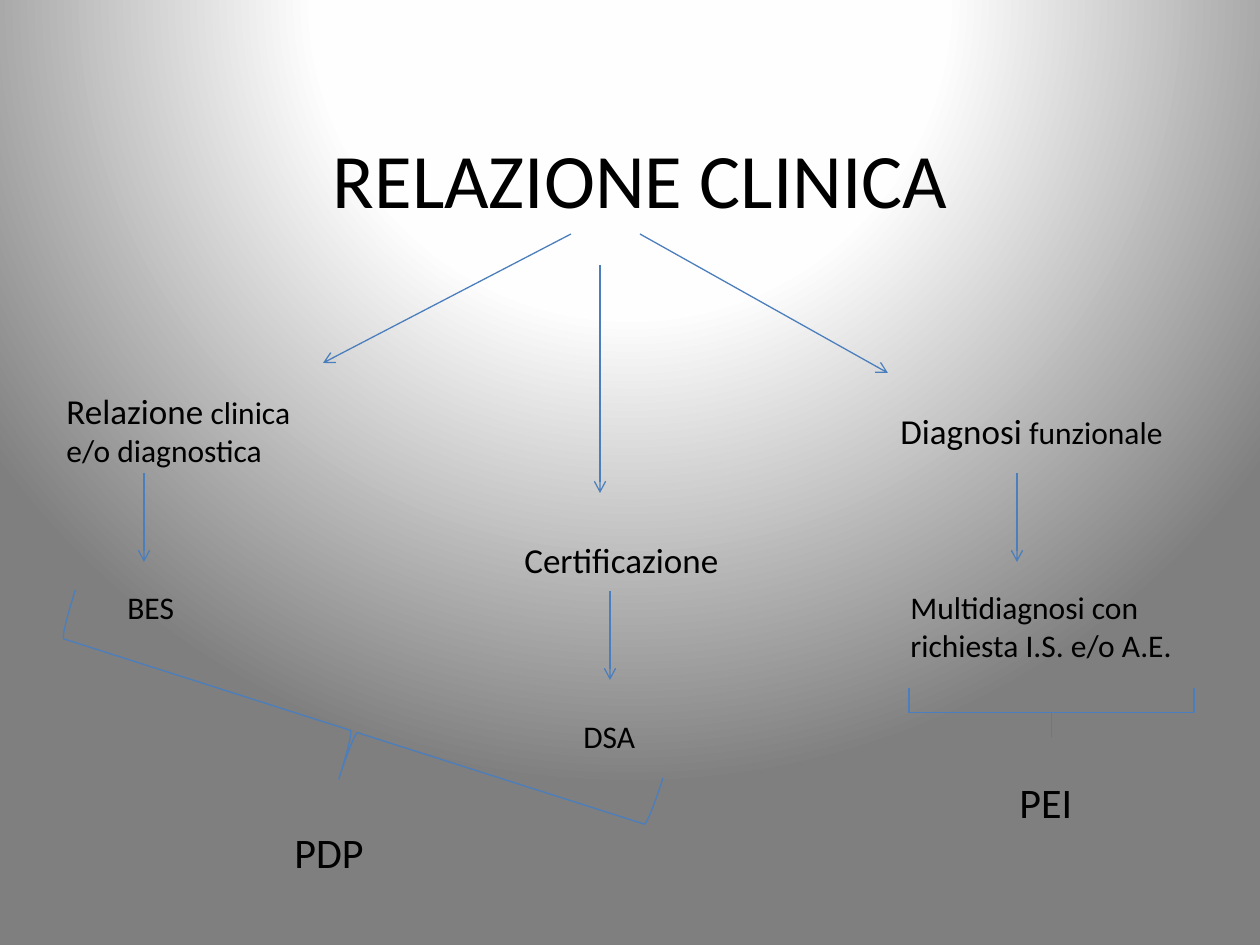
from pptx import Presentation
from pptx.dml.color import RGBColor
from pptx.enum.shapes import MSO_CONNECTOR, MSO_SHAPE
from pptx.enum.text import MSO_ANCHOR, MSO_AUTO_SIZE, PP_ALIGN
from pptx.oxml import parse_xml
from pptx.oxml.ns import nsdecls, qn
from pptx.util import Emu, Pt

STRAIGHT = MSO_CONNECTOR.STRAIGHT
BRACE = MSO_SHAPE.RIGHT_BRACE
MIDDLE = MSO_ANCHOR.MIDDLE
GROW = MSO_AUTO_SIZE.SHAPE_TO_FIT_TEXT
CENTER = PP_ALIGN.CENTER

BLACK = RGBColor(0x00, 0x00, 0x00)
BLUE = RGBColor(0x4B, 0x7E, 0xBC)
FONT = "Calibri"
EMU_PER_PX = 914400 / 126
ARROW_LENGTH = 89


def px(value):
    return Emu(round(value * EMU_PER_PX))


def set_background(slide):
    stops = ((0, "FFFFFF"), (40, "FEFEFE"), (100, "7F7F7F"))
    gs = "".join(f'<a:gs pos="{pos * 1000}"><a:srgbClr val="{color}"/></a:gs>'
                 for pos, color in stops)
    bg = parse_xml(
        f'<p:bg {nsdecls("p", "a")}><p:bgPr><a:gradFill rotWithShape="1">'
        f'<a:gsLst>{gs}</a:gsLst><a:path path="circle">'
        '<a:fillToRect l="50000" t="-80000" r="50000" b="180000"/></a:path>'
        '</a:gradFill><a:effectLst/></p:bgPr></p:bg>')
    slide.element.find(qn("p:cSld")).insert(0, bg)


def add_text(slide, box, lines):
    """Each line is a list of (text, size) runs."""
    sp = slide.shapes.add_textbox(*map(px, box))
    tf = sp.text_frame
    tf.word_wrap = False
    tf.auto_size = GROW
    for i, line in enumerate(lines):
        p = tf.paragraphs[0] if i == 0 else tf.add_paragraph()
        p.font.name = FONT
        p.font.color.rgb = BLACK
        for text, size in line:
            r = p.add_run()
            r.text = text
            r.font.size = Pt(size)
    return tf


def add_arrow(slide, start, end):
    line = slide.shapes.add_connector(STRAIGHT, *map(px, (*start, *end)))
    line.line.color.rgb = BLUE
    line.line.width = Pt(0.75)
    line.line._get_or_add_ln().append(
        parse_xml(f'<a:tailEnd {nsdecls("a")} type="arrow"/>'))
    line._element.spPr.append(parse_xml(f'<a:effectLst {nsdecls("a")}/>'))


def add_title(slide, box):
    """Heading with three arrows fanning out below it."""
    tf = add_text(slide, box, [[("RELAZIONE CLINICA", 44)]])
    tf.auto_size = MSO_AUTO_SIZE.NONE
    tf.word_wrap = True
    tf.vertical_anchor = MIDDLE
    tf.paragraphs[0].alignment = CENTER
    x, y = box[:2]
    for x1, y1, x2, y2 in ((495, 189, 495, 417), (466, 158, 218, 287),
                           (535, 158, 783, 297)):
        add_arrow(slide, (x + x1, y + y1), (x + x2, y + y2))


def add_branch(slide, box, heading, arrow, label_box, label):
    """Heading, down arrow and label; offsets are from the box corner."""
    x, y = box[:2]
    dx, dy, w, h = label_box
    add_text(slide, box, heading)
    start = (x + arrow[0], y + arrow[1])
    add_arrow(slide, start, (start[0], start[1] + ARROW_LENGTH))
    add_text(slide, (x + dx, y + dy, w, h), label)


def add_outcome(slide, box, rotation, curl, label_box, label):
    """Turned brace with its result; the label is offset from the box corner."""
    sp = slide.shapes.add_shape(BRACE, *map(px, box))
    sp.shadow.inherit = False
    sp.rotation = rotation
    sp.adjustments[0] = curl
    sp.adjustments[1] = 0.5
    sp.fill.background()
    sp.line.color.rgb = BLUE
    sp.line.width = Pt(0.75)
    dx, dy, w, h = label_box
    add_text(slide, (box[0] + dx, box[1] + dy, w, h), [[(label, 24)]])


def main():
    prs = Presentation()
    prs.slide_width, prs.slide_height = px(1260), px(945)
    slide = prs.slides.add_slide(prs.slide_layouts[6])
    set_background(slide)
    add_title(slide, (105, 76, 1071, 203))

    # Three kinds of report
    add_branch(slide, (54, 383, 258, 93),
               [[("Relazione", 20), (" clinica", 18)], [("e/o diagnostica", 18)]],
               (90, 90), (61, 199, 72, 50), [[("BES", 18)]])
    add_branch(slide, (512, 532, 222, 55), [[("Certificazione", 20)]],
               (98, 59), (59, 179, 78, 50), [[("DSA", 18)]])
    add_branch(slide, (888, 403, 291, 55),
               [[("Diagnosi", 20), (" funzionale", 18)]],
               (129, 70), (10, 179, 290, 127),
               [[("Multidiagnosi con", 18)], [("richiesta I.S. e/o A.E.", 18)]])

    # Resulting plans
    add_outcome(slide, (304, 423, 100, 617), 107.7, 0.037,
                (-22, 397, 96, 63), "PDP")
    add_outcome(slide, (1027, 570, 49, 285), 90, 0,
                (-20, 200, 78, 63), "PEI")
    prs.save("out.pptx")


if __name__ == "__main__":
    main()
